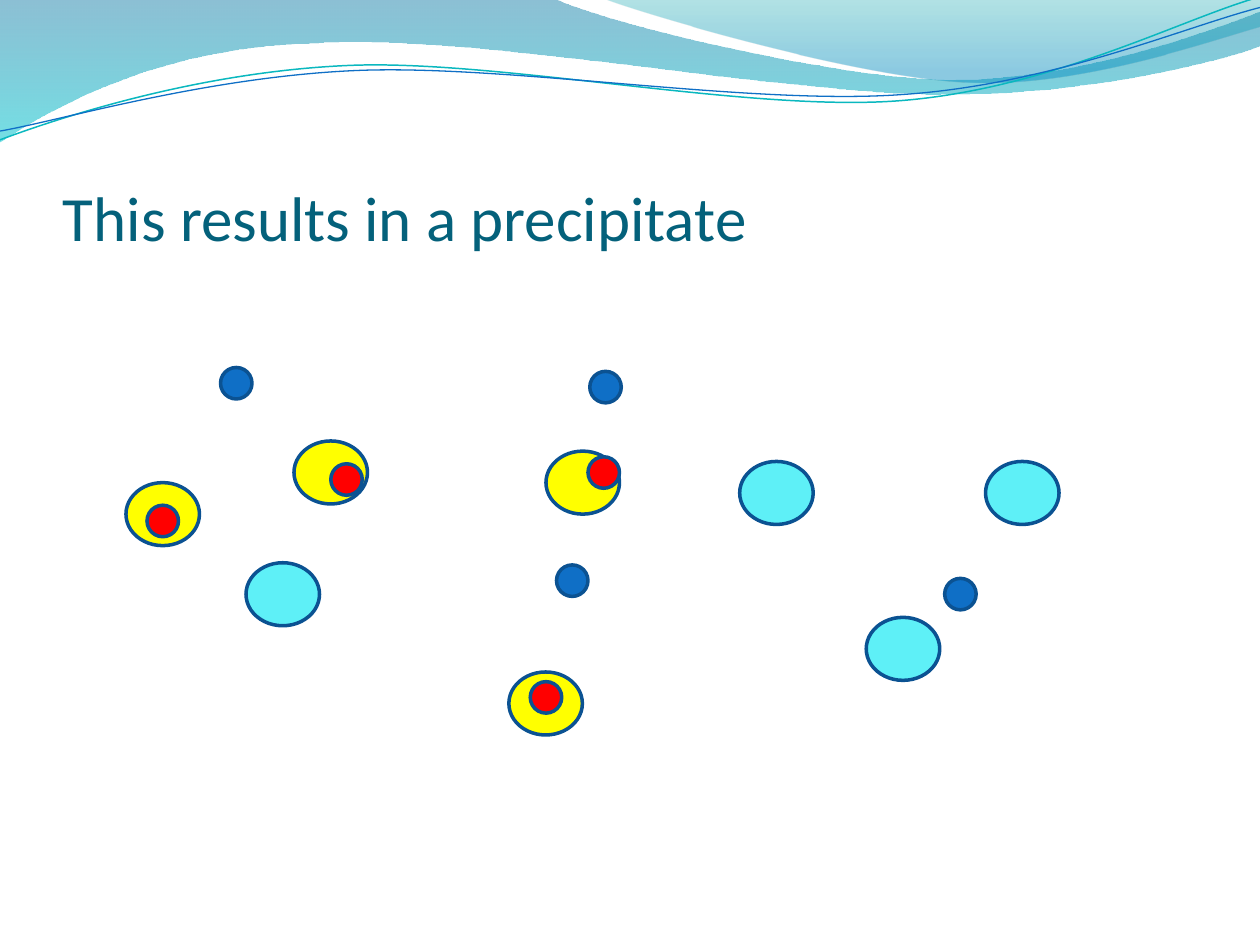
import math

import pptx
import pptx.dml.color
import pptx.enum.shapes
import pptx.enum.text
import pptx.oxml.ns
import pptx.util
from lxml import etree

Pt = pptx.util.Pt
qn = pptx.oxml.ns.qn

COLORS = {
    "title": "04617B", "outline": "0B5292", "blue": "0F6FC6",
    "yellow": "FFFF00", "red": "FF0000", "cyan": "5EF0F7",
    "teal": "0AB8BF", "wave_top": "0074A1", "wave_bottom": "00C6CF",
    "crest_top": "00A1A9", "crest_bottom": "008BBF",
}
SMALL, LARGE = (18, 18), (42, 36)
TILT = 357.3

WAVE = [(0, 0), (316.8, -0.7), (342.7, 12.2, 478.1, 45.4, 545.8, 45.4),
        (614.2, 45.4, 689.8, 18.7, 720, 6.5), (720.7, 25.9),
        (707.8, 31.7, 626.4, 54.7, 537.1, 54),
        (447.8, 54, 275, 20.2, 185, 24.5),
        (92.9, 25.9, 33.1, 59.8, -0.7, 81.4), (0, 0)]
CREST = [(344.9, -0.7), (366.5, 7.9, 491, 44.6, 553.7, 46.8),
         (616.3, 49.7, 691.9, 23, 720, 15.1), (720, 0), (344.9, -0.7)]
TEAL_LINE = [(0, 79.9), (34.6, 67, 113.8, 41, 199.4, 37.4),
             (284.4, 33.8, 427, 64.1, 513.4, 57.6),
             (599.8, 51.1, 675.4, 10.8, 718.6, -1.4)]
BLUE_LINE = [(0, 74.9), (33.8, 69.1, 118.1, 43.9, 203.8, 40.3),
             (290.2, 36.7, 429.8, 60.5, 516.2, 54),
             (601.9, 48.2, 677.5, 15.1, 720, 4.3)]

IONS = [
    ("blue", SMALL, [(126, 210), (337, 212.2), (318, 322.8), (539.8, 330.5)]),
    ("yellow", LARGE, [(72, 275.8), (168, 252), (312, 257.8), (290.8, 384)]),
    ("red", SMALL, [(336, 261), (189, 265), (84, 288.7), (303, 389.5)]),
    ("cyan", LARGE, [(140.6, 321.6), (495, 352.8), (563.2, 263.7), (422.7, 263.7)]),
]


def rgb(name):
    return pptx.dml.color.RGBColor.from_string(COLORS[name])


def apply(obj, values):
    for key, value in values.items():
        setattr(obj, key, value)


def level(path, center, angle):
    cx, cy = center
    sin, cos = math.sin(math.radians(-angle)), math.cos(math.radians(angle))
    return [sum(((cx + (x - cx) * cos - (y - cy) * sin,
                  cy + (x - cx) * sin + (y - cy) * cos)
                 for x, y in zip(segment[::2], segment[1::2])), ())
            for segment in path]


class Deck:
    font = "Calibri"
    outline_width = 2

    def __init__(self, prs):
        self.s = prs.slides.add_slide(prs.slide_layouts[6])

    def outline(self, sp, color, width):
        sp.line.color.rgb = rgb(color)
        sp.line.width = Pt(width)

    def freeform(self, path, close):
        points = [(Pt(x), Pt(y)) for segment in path
                  for x, y in zip(segment[::2], segment[1::2])]
        builder = self.s.shapes.build_freeform(*points[0])
        builder.add_line_segments(points[1:], close=close)
        sp = builder.convert_to_shape()
        sp.shadow.inherit = False
        lines = iter(list(sp.element.iter(qn("a:lnTo"))))
        for segment in path[1:]:
            first = next(lines)
            if len(segment) == 6:
                first.tag = qn("a:cubicBezTo")
                for _ in range(2):
                    line = next(lines)
                    first.append(line[0])
                    line.getparent().remove(line)
        return sp

    def band(self, path, stops):
        sp = self.freeform(path, True)
        sp.line.fill.background()
        sp.fill.gradient()
        sp.fill.gradient_angle = 270
        for stop, (position, color, _) in zip(sp.fill.gradient_stops, stops):
            stop.position = position
            stop.color.rgb = rgb(color)
        colors = sp.element.spPr.iter(qn("a:srgbClr"))
        for clr, (_, _, opacity) in zip(colors, stops):
            etree.SubElement(clr, qn("a:alpha")).set("val", str(opacity * 1000))

    def curve(self, path, center, color, width):
        sp = self.freeform(level(path, center, TILT), False)
        sp.rotation = TILT
        sp.fill.background()
        self.outline(sp, color, width)

    def title(self, text, left, top, width, height):
        tf = self.s.shapes.add_textbox(Pt(left), Pt(top), Pt(width), Pt(height)).text_frame
        apply(tf, {
            "word_wrap": True, "vertical_anchor": pptx.enum.text.MSO_ANCHOR.BOTTOM,
            "margin_left": 0, "margin_right": 0, "margin_top": Pt(3.6), "margin_bottom": 0,
        })
        r = tf.paragraphs[0].add_run()
        r.text = text
        apply(r.font, {"name": self.font, "size": Pt(36)})
        r.font.color.rgb = rgb("title")

    def ion(self, color, size, left, top):
        kind = pptx.enum.shapes.MSO_SHAPE.FLOWCHART_CONNECTOR
        sp = self.s.shapes.add_shape(kind, Pt(left), Pt(top), *map(Pt, size))
        sp.shadow.inherit = False
        sp.fill.solid()
        sp.fill.fore_color.rgb = rgb(color)
        self.outline(sp, "outline", self.outline_width)


def main():
    prs = pptx.Presentation()
    apply(prs, {"slide_width": Pt(720), "slide_height": Pt(540)})
    deck = Deck(prs)
    deck.band(WAVE, [(0, "wave_top", 45), (1, "wave_bottom", 55)])
    deck.band(CREST, [(0, "crest_top", 30), (0.8, "crest_bottom", 45)])
    deck.curve(TEAL_LINE, (359.3, 41.4), "teal", 0.85)
    deck.curve(BLUE_LINE, (359.6, 42.5), "blue", 0.75)
    deck.title("This results in a precipitate", 36, 55.4, 648, 90)
    for color, size, places in IONS:
        for left, top in places:
            deck.ion(color, size, left, top)
    prs.save("out.pptx")


if __name__ == "__main__":
    main()
